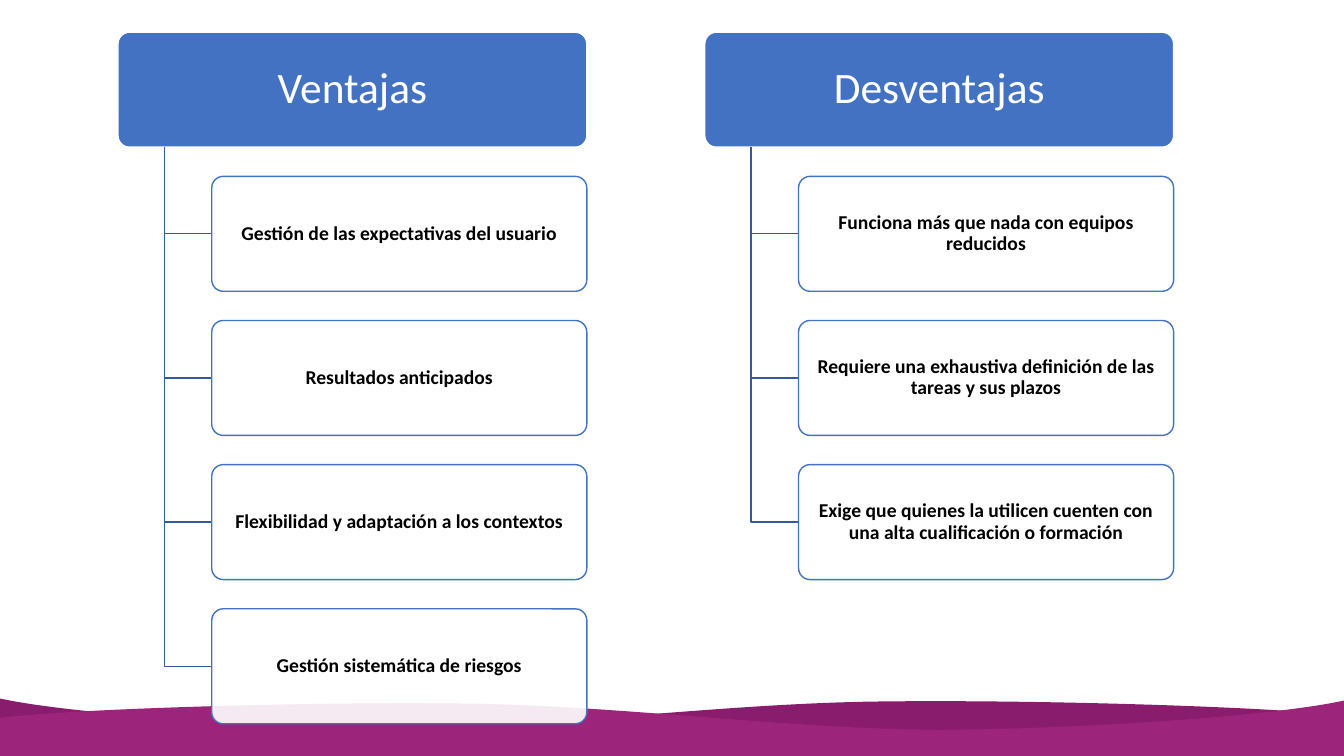
from dataclasses import dataclass

from lxml import etree
from pptx import Presentation
from pptx.dml.color import RGBColor
from pptx.enum.shapes import MSO_SHAPE
from pptx.enum.text import MSO_ANCHOR, PP_ALIGN
from pptx.oxml.ns import qn
from pptx.shapes.autoshape import Shape
from pptx.slide import Slide
from pptx.util import Inches, Pt

ROUNDED = MSO_SHAPE.ROUNDED_RECTANGLE
CENTER = PP_ALIGN.CENTER
MIDDLE = MSO_ANCHOR.MIDDLE

Point = tuple[float, float]
Curve = tuple[Point, Point, Point]


@dataclass(frozen=True)
class Theme:
    font: str = "Calibri"
    blue: str = "4372C3"
    branch: str = "345A99"
    white: str = "FFFFFF"
    black: str = "000000"
    dark_wave: str = "891C6C"
    light_wave: str = "9C247B"
    header_size: int = 31
    item_size: int = 14
    line_width: int = 1


@dataclass(frozen=True)
class BoxStyle:
    fill: str
    line: str
    color: str
    size: int
    bold: bool
    inset_x: float
    inset_y: float
    opacity: int = 100


@dataclass(frozen=True)
class Column:
    title: str
    items: list[str]


@dataclass(frozen=True)
class Wave:
    color: str
    start: Point
    curves: list[Curve]


THEME = Theme()
HEADER = BoxStyle(THEME.blue, THEME.white, THEME.white, THEME.header_size, False, 0.13, 0.07)
ITEM = BoxStyle(THEME.white, THEME.blue, THEME.black, THEME.item_size, True, 0.1, 0.05, 90)

SLIDE_W, SLIDE_H = 13.33, 7.5
LEFT, TOP = 1.17, 0.32
COLUMN_STEP, ROW_STEP = 5.82, 1.43
HEADER_W, ITEM_W, BOX_H = 4.65, 3.72, 1.14
TRUNK_INDENT, ITEM_INDENT = 0.46, 0.93

COLUMNS = [
    Column("Ventajas", [
        "Gestión de las expectativas del usuario",
        "Resultados anticipados",
        "Flexibilidad y adaptación a los contextos",
        "Gestión sistemática de riesgos",
    ]),
    Column("Desventajas", [
        "Funciona más que nada con equipos reducidos",
        "Requiere una exhaustiva definición de las tareas y sus plazos",
        "Exige que quienes la utilicen cuenten con una alta cualificación o formación",
    ]),
]

WAVES = [
    Wave(THEME.dark_wave, (SLIDE_W, 7.1), [
        ((12.56, 7.01), (10.26, 6.94), (8.7, 6.96)),
        ((7.15, 6.98), (5.43, 7.22), (3.98, 7.22)),
        ((2.53, 7.21), (0.68, 7.08), (0, 6.93)),
    ]),
    Wave(THEME.light_wave, (0, 7.12), [
        ((0.76, 7.03), (3.06, 6.96), (4.62, 6.98)),
        ((6.18, 7), (7.89, 7.24), (9.35, 7.24)),
        ((10.8, 7.23), (12.65, 7.1), (SLIDE_W, 6.95)),
    ]),
]


def rgb(value: str) -> RGBColor:
    return RGBColor.from_string(value)


def set_line(sp: Shape, color: str) -> None:
    sp.line.color.rgb = rgb(color)
    sp.line.width = Pt(THEME.line_width)


def add_outline(s: Slide, points: list[Point], close: bool) -> Shape:
    start, *rest = [(Inches(x), Inches(y)) for x, y in points]
    builder = s.shapes.build_freeform(*start)
    builder.add_line_segments(rest, close=close)
    sp = builder.convert_to_shape()
    sp.shadow.inherit = False
    return sp


def bend_segments(sp: Shape, curves: list[Curve]) -> None:
    """Turn the first straight segments of the outline into cubic curves."""
    segments = list(sp.element.iter(qn("a:lnTo")))
    for segment, curve in zip(segments, curves):
        bend = etree.Element(qn("a:cubicBezTo"))
        for x, y in curve:
            local = {"x": str(Inches(x) - sp.left), "y": str(Inches(y) - sp.top)}
            etree.SubElement(bend, qn("a:pt"), local)
        segment.getparent().replace(segment, bend)


def add_wave(s: Slide, wave: Wave) -> None:
    ends = [curve[-1] for curve in wave.curves]
    corners = [(ends[-1][0], SLIDE_H), (wave.start[0], SLIDE_H)]
    sp = add_outline(s, [wave.start, *ends, *corners], close=True)
    bend_segments(sp, wave.curves)
    sp.fill.solid()
    sp.fill.fore_color.rgb = rgb(wave.color)
    sp.line.fill.background()


def add_branch(s: Slide, x: float, top: float, right: float, bottom: float) -> None:
    sp = add_outline(s, [(x, top), (x, bottom), (right, bottom)], close=False)
    sp.fill.background()
    set_line(sp, THEME.branch)


def add_box(s: Slide, x: float, y: float, width: float, text: str, style: BoxStyle) -> None:
    sp = s.shapes.add_shape(ROUNDED, Inches(x), Inches(y), Inches(width), Inches(BOX_H))
    sp.adjustments[0] = 0.1
    sp.shadow.inherit = False
    sp.fill.solid()
    sp.fill.fore_color.rgb = rgb(style.fill)
    if style.opacity < 100:
        color = sp.element.spPr.find(qn("a:solidFill")).find(qn("a:srgbClr"))
        etree.SubElement(color, qn("a:alpha"), val=str(style.opacity * 1000))
    set_line(sp, style.line)

    tf = sp.text_frame
    frame_format = {
        "word_wrap": True,
        "vertical_anchor": MIDDLE,
        "margin_left": Inches(style.inset_x),
        "margin_right": Inches(style.inset_x),
        "margin_top": Inches(style.inset_y),
        "margin_bottom": Inches(style.inset_y),
    }
    for name, value in frame_format.items():
        setattr(tf, name, value)
    p = tf.paragraphs[0]
    p.alignment = CENTER
    p.line_spacing = 0.9
    r = p.add_run()
    r.text = text
    font_format = {"name": THEME.font, "size": Pt(style.size), "bold": style.bold}
    for name, value in font_format.items():
        setattr(r.font, name, value)
    r.font.color.rgb = rgb(style.color)


def add_column(s: Slide, x: float, column: Column) -> None:
    add_box(s, x, TOP, HEADER_W, column.title, HEADER)
    item_x = x + ITEM_INDENT
    for row, text in enumerate(column.items, start=1):
        y = TOP + row * ROW_STEP
        add_branch(s, x + TRUNK_INDENT, TOP + BOX_H, item_x, y + BOX_H / 2)
        add_box(s, item_x, y, ITEM_W, text, ITEM)


def main() -> None:
    prs = Presentation()
    prs.slide_width, prs.slide_height = Inches(SLIDE_W), Inches(SLIDE_H)
    s = prs.slides.add_slide(prs.slide_layouts[6])
    for wave in WAVES:
        add_wave(s, wave)
    for i, column in enumerate(COLUMNS):
        add_column(s, LEFT + i * COLUMN_STEP, column)
    prs.save("out.pptx")


if __name__ == "__main__":
    main()
